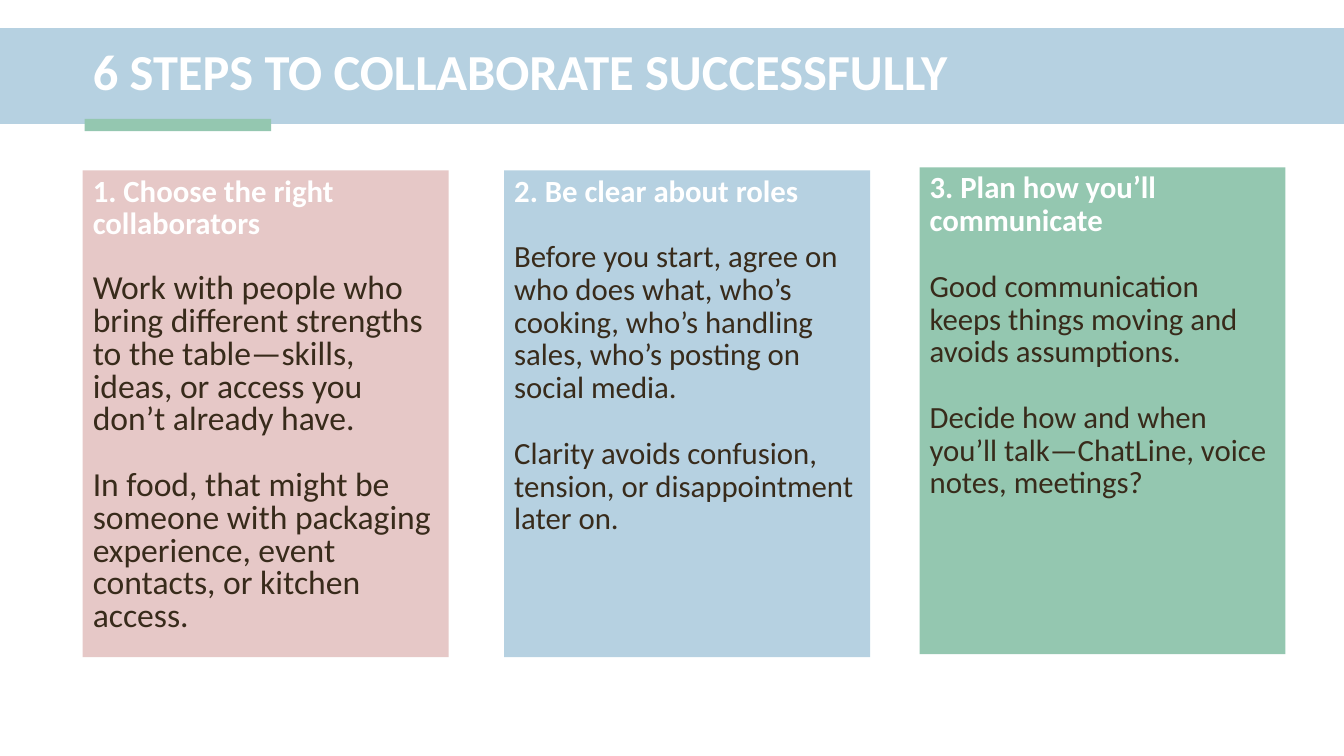
from dataclasses import dataclass

import lxml.etree
import pptx
import pptx.dml.color
import pptx.enum.shapes
import pptx.enum.text
import pptx.oxml.ns
import pptx.util

TITLE = "6 STEPS TO COLLABORATE SUCCESSFULLY"
STEPS = [
    {
        "heading": "1. Choose the right collaborators",
        "body": [
            "Work with people who bring different strengths to the table—skills, ideas, or access you don’t already have.",
            "In food, that might be someone with packaging experience, event contacts, or kitchen access.",
        ],
        "fill": "pink", "size": 24, "left": 0.82, "top": 1.69,
    },
    {
        "heading": "2. Be clear about roles",
        "body": [
            "Before you start, agree on who does what, who’s cooking, who’s handling sales, who’s posting on social media.",
            "Clarity avoids confusion, tension, or disappointment later on.",
        ],
        "fill": "blue", "size": 22, "left": 5, "top": 1.69,
    },
    {
        "heading": "3. Plan how you’ll communicate",
        "body": [
            "Good communication keeps things moving and avoids assumptions.",
            "Decide how and when you’ll talk—ChatLine, voice notes, meetings?",
        ],
        "fill": "green", "size": 22, "left": 9.12, "top": 1.66,
    },
]
SLIDE_WIDTH, SLIDE_HEIGHT = 13.33, 7.5
CARD_WIDTH, CARD_HEIGHT = 3.63, 4.83
BARS = [
    ("blue", (0, 0.28, SLIDE_WIDTH, 0.95)),
    ("green", (0.84, 1.18, 1.85, 0.12)),
]
TITLE_AREA = (0.82, 0.34, 11.93, 0.79)


@dataclass(frozen=True)
class Theme:
    font: str = "Calibri"
    pink: str = "E6C8C7"
    blue: str = "B6D1E1"
    green: str = "94C7B0"
    light: str = "FFFFFF"
    dark: str = "382B1B"
    title: int = 36
    heading: int = 22
    line: float = 23.4


THEME = Theme()


def color(name):
    return pptx.dml.color.RGBColor.from_string(getattr(THEME, name))


def place(shape, area):
    shape.left, shape.top, shape.width, shape.height = map(pptx.util.Inches, area)


def paint(shape, name):
    shape.fill.solid()
    shape.fill.fore_color.rgb = color(name)
    shape.line.fill.background()


def prepare(box, anchor):
    frame = box.text_frame
    frame.word_wrap = True
    frame.auto_size = pptx.enum.text.MSO_AUTO_SIZE.NONE
    frame.vertical_anchor = anchor
    return frame


def format_para(para, size, name, bold):
    para.alignment = pptx.enum.text.PP_ALIGN.LEFT
    para.space_before = para.space_after = pptx.util.Pt(0)
    for span in para.runs:
        span.font.name = THEME.font
        span.font.size = pptx.util.Pt(size)
        span.font.color.rgb = color(name)
        span.font.bold = bold


def remove_bullet(para):
    properties = para._p.get_or_add_pPr()
    properties.set("marL", "0")
    properties.set("indent", "0")
    lxml.etree.SubElement(properties, pptx.oxml.ns.qn("a:buNone"))


def add_bars(page):
    for depth, (name, area) in enumerate(BARS):
        bar = page.shapes.add_shape(
            pptx.enum.shapes.MSO_SHAPE.RECTANGLE, *map(pptx.util.Inches, area))
        bar.shadow.inherit = False
        paint(bar, name)
        page.shapes._spTree.insert(2 + depth, bar._element)


def fill_title(box):
    place(box, TITLE_AREA)
    frame = prepare(box, pptx.enum.text.MSO_ANCHOR.MIDDLE)
    frame.text = TITLE
    para = frame.paragraphs[0]
    format_para(para, THEME.title, "light", True)
    para.line_spacing = 0.9


def fill_card(box, step):
    place(box, (step["left"], step["top"], CARD_WIDTH, CARD_HEIGHT))
    paint(box, step["fill"])
    frame = prepare(box, pptx.enum.text.MSO_ANCHOR.TOP)
    frame.text = "\n".join([step["heading"], *step["body"]])
    for position, para in enumerate(frame.paragraphs):
        remove_bullet(para)
        if position == 0:
            format_para(para, THEME.heading, "light", True)
        else:
            format_para(para, step["size"], "dark", False)
            para.space_before = pptx.util.Pt(THEME.line)
        para.line_spacing = pptx.util.Pt(THEME.line)


def main():
    deck = pptx.Presentation()
    deck.slide_width = pptx.util.Inches(SLIDE_WIDTH)
    deck.slide_height = pptx.util.Inches(SLIDE_HEIGHT)
    page = deck.slides.add_slide(deck.slide_layouts.get_by_name("Comparison"))
    title, *boxes = page.placeholders
    fill_title(title)
    for box, step in zip(boxes, STEPS):
        fill_card(box, step)
    for spare in boxes[len(STEPS):]:
        spare._element.getparent().remove(spare._element)
    add_bars(page)
    deck.save("out.pptx")


if __name__ == "__main__":
    main()
